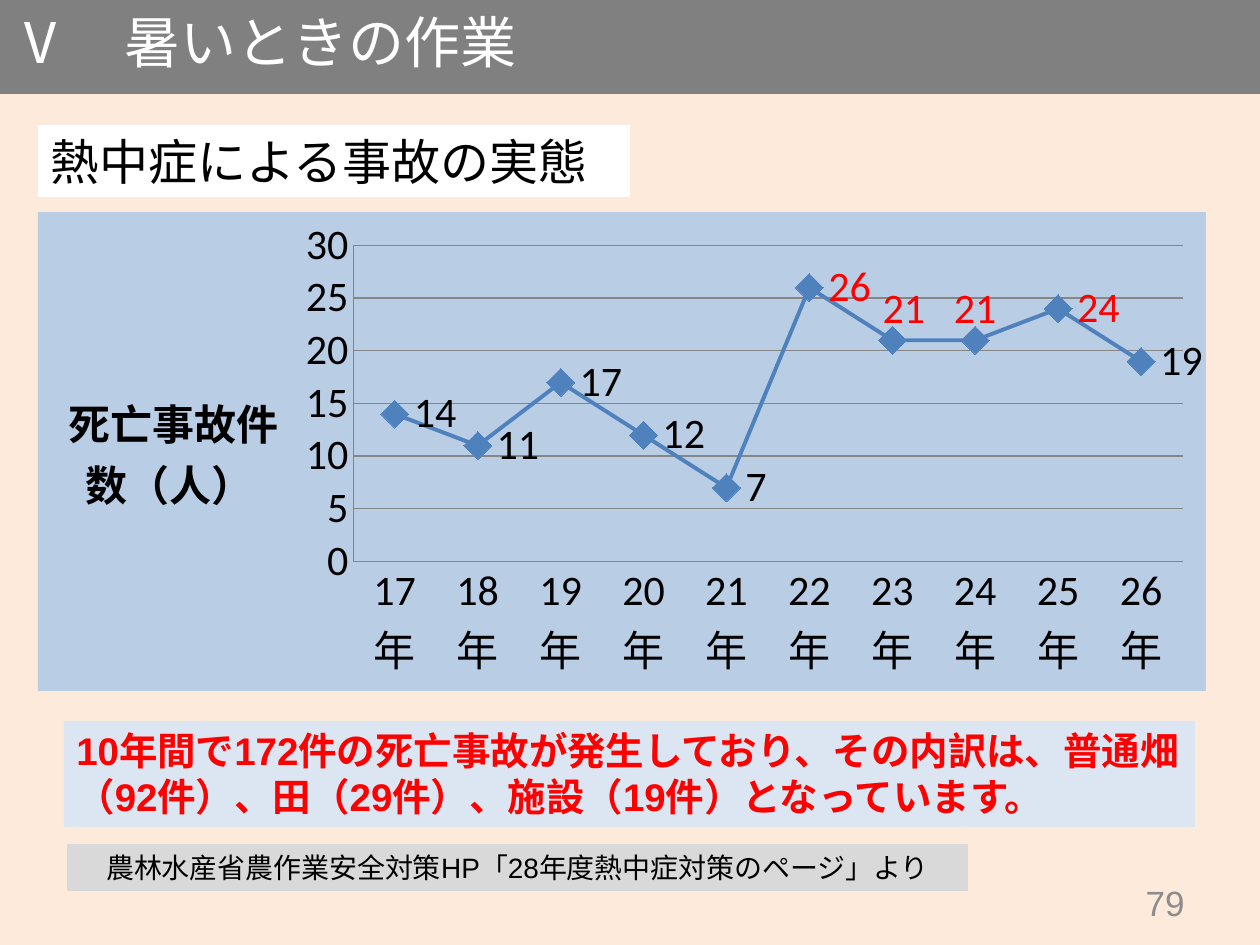
import pptx
import pptx.chart.data
import pptx.dml.color
import pptx.enum.chart
import pptx.enum.shapes
import pptx.enum.text
import pptx.oxml
import pptx.oxml.ns
import pptx.util

EMU_PER_PX = 914400 / 126
ALIGN = pptx.enum.text.PP_ALIGN
ANCHOR = pptx.enum.text.MSO_ANCHOR
LABEL_POSITION = pptx.enum.chart.XL_LABEL_POSITION
DEATHS = {17: 14, 18: 11, 19: 17, 20: 12, 21: 7, 22: 26, 23: 21, 24: 21, 25: 24, 26: 19}
RED_YEARS = (22, 23, 24, 25)
RAISED_LABEL_OFFSETS = {23: {"x": 0.01, "y": 0.03}, 24: {"x": 0, "y": 0.03}}


def px(length):
    """Turn pixels into EMU."""
    return round(length * EMU_PER_PX)


def color(value):
    """Turn a hex string into a colour."""
    return pptx.dml.color.RGBColor.from_string(value)


def fill_solid(target, value):
    """Fill a shape or chart format with one colour."""
    target.fill.solid()
    target.fill.fore_color.rgb = color(value)


def format_font(font, size, value="000000", name="Calibri", bold=False):
    """Set the face, size, weight and colour of a font."""
    font.name = name
    font.size = pptx.util.Pt(size)
    font.bold = bold
    font.color.rgb = color(value)


def write_text(shape, text, size, value="000000", bold=False, align=ALIGN.LEFT, anchor=ANCHOR.TOP):
    """Put one formatted paragraph into a shape."""
    frame = shape.text_frame
    frame.word_wrap = True
    frame.auto_size = pptx.enum.text.MSO_AUTO_SIZE.NONE
    frame.vertical_anchor = anchor
    paragraph = frame.paragraphs[0]
    paragraph.alignment = align
    run = paragraph.add_run()
    run.text = text
    format_font(run.font, size, value, "Arial", bold)


def add_title(slide, box, text):
    """Place the slide title as a grey band."""
    title = slide.shapes.title
    title.left, title.top, title.width, title.height = map(px, box)
    fill_solid(title, "808080")
    write_text(title, text, 32, "FFFFFF", anchor=ANCHOR.MIDDLE)
    title.text_frame.margin_top = 0
    title.text_frame.margin_bottom = px(12)


def add_panel(slide, box, fill, text, size, **text_format):
    """Add a filled rectangle holding text."""
    panel = slide.shapes.add_shape(pptx.enum.shapes.MSO_SHAPE.RECTANGLE, *map(px, box))
    panel.shadow.inherit = False
    panel.line.fill.background()
    fill_solid(panel, fill)
    write_text(panel, text, size, **text_format)


def add_page_number(slide, box, number):
    """Add the page number."""
    text_box = slide.shapes.add_textbox(*map(px, box))
    write_text(text_box, number, 20, "8C8C8C", align=ALIGN.RIGHT, anchor=ANCHOR.MIDDLE)


def set_layout(element, successor_tags, settings="", **fractions):
    """Place a chart part by fractions of the chart."""
    for old in element.findall(pptx.oxml.ns.qn("c:layout")):
        element.remove(old)
    values = "".join(f'<c:{key} val="{value}"/>' for key, value in fractions.items())
    layout = pptx.oxml.parse_xml(
        f'<c:layout {pptx.oxml.ns.nsdecls("c")}><c:manualLayout>'
        f"{settings}{values}</c:manualLayout></c:layout>"
    )
    element.insert_element_before(layout, *successor_tags)


def format_axes(chart, edge_modes):
    """Format both axes, the gridlines and the value title."""
    for axis in (chart.category_axis, chart.value_axis):
        axis.major_tick_mark = pptx.enum.chart.XL_TICK_MARK.NONE
        axis.format.line.color.rgb = color("868686")
        format_font(axis.tick_labels.font, 24)
    axis = chart.value_axis
    axis.minimum_scale, axis.maximum_scale, axis.major_unit = 0, 30, 5
    axis.major_gridlines.format.line.color.rgb = color("868686")
    frame = axis.axis_title.text_frame
    frame.text = "死亡事故件数（人） "
    format_font(frame.paragraphs[0].runs[0].font, 24, bold=True)
    title = axis.axis_title._element
    body = title.find(".//" + pptx.oxml.ns.qn("a:bodyPr"))
    body.set("rot", "0")
    body.set("vert", "horz")
    set_layout(title, ("c:overlay", "c:spPr", "c:txPr"), edge_modes, x=0.02, y=0.35)


def format_series(plot):
    """Format the line, its markers and its value labels."""
    series = plot.series[0]
    series.smooth = False
    series.format.line.color.rgb = color("4F81BD")
    series.format.line.width = pptx.util.Pt(2.25)
    series.marker.style = pptx.enum.chart.XL_MARKER_STYLE.DIAMOND
    series.marker.size = 16
    fill_solid(series.marker.format, "4F81BD")
    series.marker.format.line.color.rgb = color("4F81BD")
    labels = series.data_labels
    labels.show_value = True
    labels.position = LABEL_POSITION.RIGHT
    format_font(labels.font, 24)
    for index, year in enumerate(DEATHS):
        if year in RED_YEARS:
            label = series.points[index].data_label
            format_font(label.font, 24, "FF0000")
            label.position = LABEL_POSITION.RIGHT
            if year in RAISED_LABEL_OFFSETS:
                label.position = LABEL_POSITION.ABOVE
                successor_tags = ("c:tx", "c:numFmt", "c:spPr", "c:txPr", "c:dLblPos")
                set_layout(label._get_or_add_dLbl(), successor_tags, **RAISED_LABEL_OFFSETS[year])


def add_accident_chart(slide, box):
    """Add the line chart of deaths by year."""
    data = pptx.chart.data.CategoryChartData()
    data.categories = [f"{year}年" for year in DEATHS]
    data.add_series("Series 1", DEATHS.values())
    kind = pptx.enum.chart.XL_CHART_TYPE.LINE_MARKERS
    chart = slide.shapes.add_chart(kind, *map(px, box), data).chart
    chart.has_legend = False
    chart.has_title = False
    format_font(chart.font, 24)
    chart.plots[0].vary_by_categories = False
    edge_modes = '<c:xMode val="edge"/><c:yMode val="edge"/>'
    format_axes(chart, edge_modes)
    format_series(chart.plots[0])
    space = chart._chartSpace
    inner_modes = '<c:layoutTarget val="inner"/>' + edge_modes
    plot_area = space.chart.plotArea
    set_layout(plot_area, ("c:lineChart",), inner_modes, x=0.27, y=0.07, w=0.71, h=0.66)
    background = pptx.oxml.parse_xml(
        f'<c:spPr {pptx.oxml.ns.nsdecls("c", "a")}><a:solidFill><a:srgbClr val="B9CDE5"/>'
        "</a:solidFill><a:ln><a:noFill/></a:ln></c:spPr>"
    )
    space.chart.addnext(background)


def main():
    """Build and save the slide."""
    presentation = pptx.Presentation()
    presentation.slide_width, presentation.slide_height = px(1260), px(945)
    slide = presentation.slides.add_slide(presentation.slide_layouts[5])
    fill_solid(slide.background, "FDEADA")
    add_title(slide, (0, 0, 1260, 94), "Ⅴ　暑いときの作業")
    add_panel(slide, (38, 125, 592, 72), "FFFFFF", "熱中症による事故の実態", 28)
    add_accident_chart(slide, (38, 212, 1168, 479))
    add_panel(
        slide, (64, 721, 1131, 106), "DCE6F2",
        "10年間で172件の死亡事故が発生しており、その内訳は、"
        "普通畑（92件）、田（29件）、施設（19件）となっています。",
        22, value="FF0000", bold=True,
    )
    add_panel(
        slide, (67, 844, 901, 47), "D9D9D9",
        "農林水産省農作業安全対策HP「28年度熱中症対策のページ」より",
        16, align=ALIGN.CENTER,
    )
    add_page_number(slide, (903, 878, 294, 50), "79")
    presentation.save("out.pptx")


if __name__ == "__main__":
    main()
